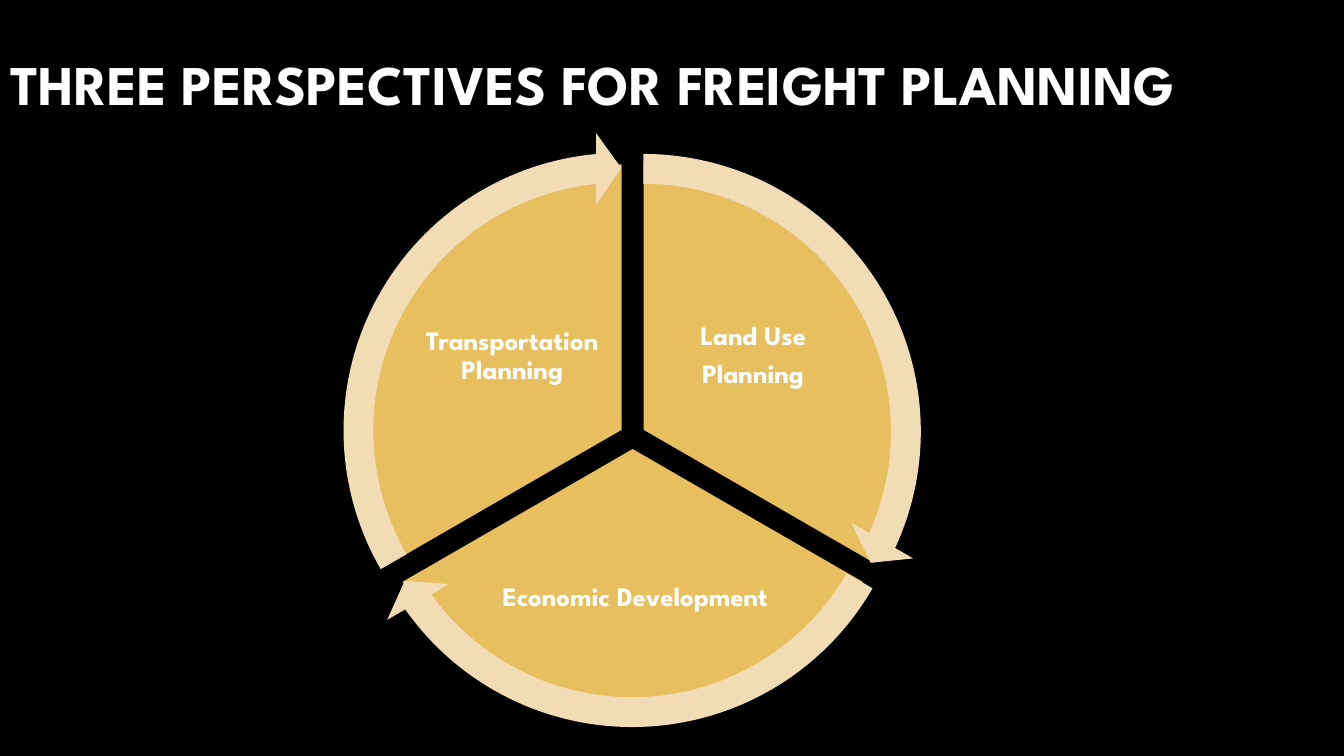
from dataclasses import dataclass

from pptx import Presentation
from pptx.dml.color import RGBColor
from pptx.enum.shapes import MSO_SHAPE
from pptx.enum.text import MSO_ANCHOR, MSO_AUTO_SIZE, PP_ALIGN
from pptx.util import Inches, Pt

PIE, ARROW = MSO_SHAPE.PIE, MSO_SHAPE.CIRCULAR_ARROW
MIDDLE, FIXED = MSO_ANCHOR.MIDDLE, MSO_AUTO_SIZE.NONE
LEFT, CENTER = PP_ALIGN.LEFT, PP_ALIGN.CENTER

COLORS = {"back": "000000", "text": "FFFFFF", "fade": "A6A6A6",
          "pie": "E7BF5F", "arrow": "F1DCB6"}
FONT = "League Spartan"
PIE_SIZE, ARROW_SIZE = 5.27, 5.92
UNIT = 0.6  # one degree in adjustment units


@dataclass
class Wedge:
    lines: list[str]
    box: tuple[float, float, float, float]
    pie: tuple[float, float]
    arrow: tuple[float, float]
    start: float  # degrees, clockwise from the right
    stop: float
    tip: float  # adjustment for the end of the arrow


WEDGES = [
    Wedge(["Land Use", "Planning"], (6.53, 2.75, 1.88, 1.57),
          (3.75, 1.63), (3.42, 1.32), 270, 30, 14.73),
    Wedge(["Economic Development"], (4.89, 5.24, 2.82, 1.38),
          (3.64, 1.82), (3.31, 1.5), 30, 150, 86.72),
    Wedge(["Transportation Planning"], (4.14, 2.75, 1.88, 1.57),
          (3.53, 1.63), (3.2, 1.31), 150, 270, 158.73),
]


def color(name: str) -> RGBColor:
    return RGBColor.from_string(COLORS[name])


def add_run(para, text: str, size: float):
    run = para.add_run()
    run.text = text
    font = run.font
    font.name, font.size, font.bold = FONT, Pt(size), True
    return font


def add_round(slide, kind, spot: tuple[float, float], size: float,
              fill: str, adjust: list[float]) -> None:
    x, y = spot
    shape = slide.shapes.add_shape(
        kind, Inches(x), Inches(y), Inches(size), Inches(size))
    for i, value in enumerate(adjust):
        shape.adjustments[i] = value
    shape.shadow.inherit = False
    shape.fill.solid()
    shape.fill.fore_color.rgb = color(fill)
    shape.line.fill.background()


def add_label(slide, wedge: Wedge) -> None:
    box = slide.shapes.add_textbox(*map(Inches, wedge.box))
    frame = box.text_frame
    frame.word_wrap = True
    frame.vertical_anchor = MIDDLE
    frame.margin_left = frame.margin_right = Inches(0.03)
    frame.margin_top = frame.margin_bottom = Inches(0.03)
    for i, line in enumerate(wedge.lines):
        para = frame.add_paragraph() if i else frame.paragraphs[0]
        para.alignment = CENTER
        para.line_spacing = 0.9
        para.space_after = Pt(6.65)
        add_run(para, line, 19).color.rgb = color("text")


def add_title(slide, text: str) -> None:
    title = slide.shapes.title
    title.left, title.top = Inches(0), Inches(0)
    title.width, title.height = Inches(12.08), Inches(1.74)
    frame = title.text_frame
    frame.word_wrap = True
    frame.auto_size = FIXED
    frame.vertical_anchor = MIDDLE
    para = frame.paragraphs[0]
    para.alignment = LEFT
    para.line_spacing = 0.9
    fill = add_run(para, text, 40).fill
    fill.gradient()
    fill.gradient_angle = 267
    for stop, name in zip(fill.gradient_stops, ("text", "fade")):
        stop.color.rgb = color(name)


def main() -> None:
    deck = Presentation()
    deck.slide_width, deck.slide_height = Inches(13.33), Inches(7.5)
    slide = deck.slides.add_slide(deck.slide_layouts[5])
    slide.background.fill.solid()
    slide.background.fill.fore_color.rgb = color("back")

    add_title(slide, "THREE PERSPECTIVES FOR FREIGHT PLANNING")

    # Pie wedges with their labels
    for wedge in WEDGES:
        add_round(slide, PIE, wedge.pie, PIE_SIZE, "pie",
                  [wedge.start * UNIT, wedge.stop * UNIT])
        add_label(slide, wedge)

    # Arrows around the rim
    for wedge in WEDGES:
        add_round(slide, ARROW, wedge.arrow, ARROW_SIZE, "arrow",
                  [0.05, 3.28, wedge.tip, wedge.start * UNIT, 0.06])

    deck.save("out.pptx")


if __name__ == "__main__":
    main()
